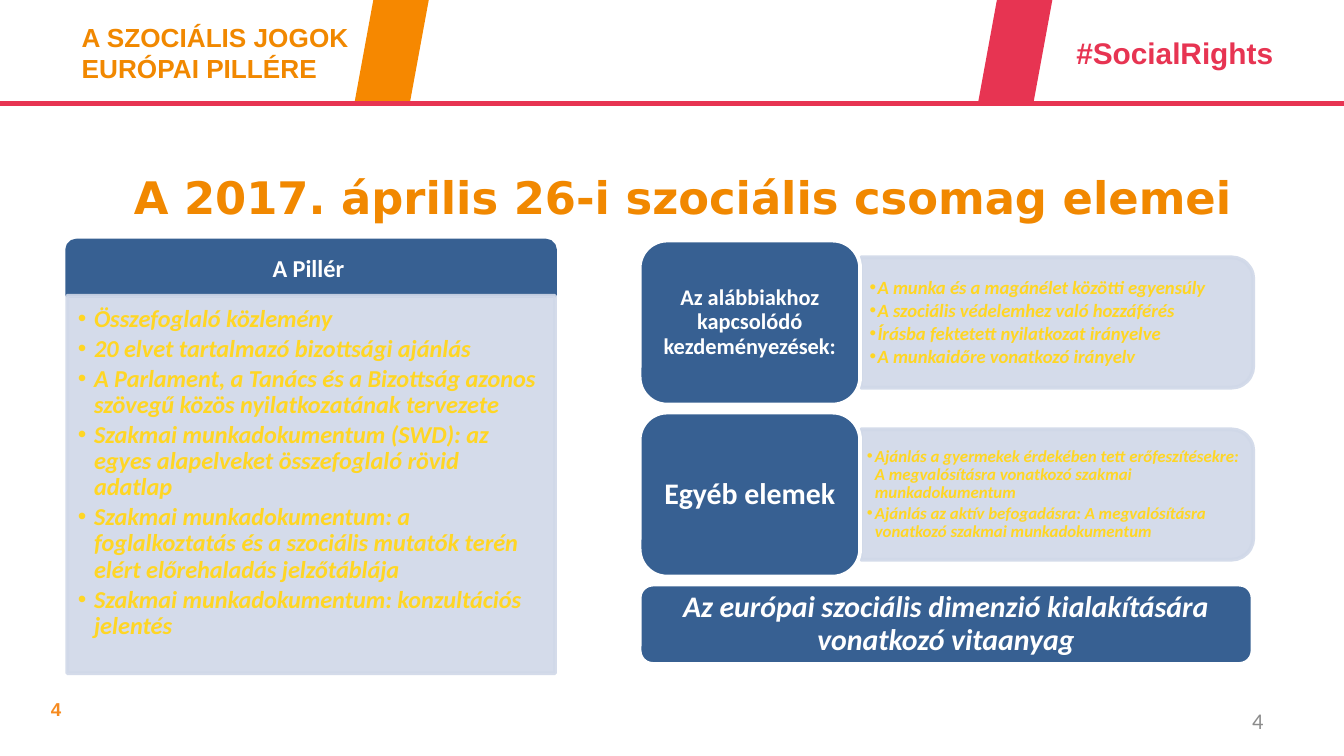
from pptx import Presentation
from pptx.dml.color import RGBColor
from pptx.enum.shapes import MSO_CONNECTOR, MSO_SHAPE
from pptx.enum.text import MSO_ANCHOR, MSO_AUTO_SIZE, PP_ALIGN
from pptx.oxml.ns import qn
from pptx.util import Emu, Pt
from lxml import etree

PX = 9144
ORANGE, RED, BLUE, PALE = "F18800", "E73452", "376092", "D0D8E8"
YELLOW, WHITE = "FFD624", "FFFFFF"
LEFT, CENTER, RIGHT = PP_ALIGN.LEFT, PP_ALIGN.CENTER, PP_ALIGN.RIGHT
TOP, MIDDLE = MSO_ANCHOR.TOP, MSO_ANCHOR.MIDDLE
NO_FIT = MSO_AUTO_SIZE.NONE
STRAIGHT = MSO_CONNECTOR.STRAIGHT
SLANT, ROUND = MSO_SHAPE.PARALLELOGRAM, MSO_SHAPE.ROUNDED_RECTANGLE
ROUND_TOP = MSO_SHAPE.ROUND_2_SAME_RECTANGLE

PILLAR = [
    "Összefoglaló közlemény",
    "20 elvet tartalmazó bizottsági ajánlás",
    "A Parlament, a Tanács és a Bizottság azonos szövegű közös nyilatkozatának tervezete",
    "Szakmai munkadokumentum (SWD): az egyes alapelveket összefoglaló rövid adatlap",
    "Szakmai munkadokumentum: a foglalkoztatás és a szociális mutatók terén elért "
    "előrehaladás jelzőtáblája",
    "Szakmai munkadokumentum: konzultációs jelentés",
]
ROWS = [
    ("Az alábbiakhoz kapcsolódó kezdeményezések:", 12, 5, [
        "A munka és a magánélet közötti egyensúly",
        "A szociális védelemhez való hozzáférés",
        "Írásba fektetett nyilatkozat irányelve",
        "A munkaidőre vonatkozó irányelv",
    ], 10, (6, 3, 6, 3)),
    ("Egyéb elemek", 16, 7, [
        "Ajánlás a gyermekek érdekében tett erőfeszítésekre: "
        "A megvalósításra vonatkozó szakmai munkadokumentum",
        "Ajánlás az aktív befogadásra: A megvalósításra vonatkozó szakmai munkadokumentum",
    ], 9, (4, 2, 4, 2)),
]


def px(n):
    return Emu(n * PX)


def rgb(color):
    return RGBColor.from_string(color)


def place(sp, x, y, w, h):
    sp.left, sp.top, sp.width, sp.height = px(x), px(y), px(w), px(h)


def write(sp, lines, size, color, font="Calibri", bold=True, italic=False,
          align=LEFT, anchor=MIDDLE, inset=(10, 5, 10, 5), spacing=None, bullet=0):
    tf = sp.text_frame
    tf.word_wrap = True
    tf.auto_size = NO_FIT
    tf.vertical_anchor = anchor
    tf.margin_left, tf.margin_top, tf.margin_right, tf.margin_bottom = map(px, inset)
    for i, line in enumerate(lines):
        p = tf.add_paragraph() if i else tf.paragraphs[0]
        p.alignment = align
        p.line_spacing = spacing
        p.space_before = Pt(0)
        if bullet:
            add_bullet(p, bullet)
            p.space_after = Pt(size * 0.15)
        r = p.add_run()
        r.text = line
        f = r.font
        f.name, f.size, f.bold, f.italic = font, Pt(size), bold, italic
        f.color.rgb = rgb(color)


def add_bullet(p, indent):
    p.level = 1
    pPr = p._p.get_or_add_pPr()
    pPr.set("marL", str(px(indent)))
    pPr.set("indent", str(px(-indent)))
    etree.SubElement(pPr, qn("a:buFont")).set("typeface", "Arial")
    etree.SubElement(pPr, qn("a:buChar")).set("char", "•")


def paint(sp, fill, line=None, alpha=None):
    sp.fill.solid()
    sp.fill.fore_color.rgb = rgb(fill)
    if line:
        sp.line.color.rgb = rgb(line)
        sp.line.width = Pt(2)
    else:
        sp.line.fill.background()
    if alpha:
        for clr in sp._element.spPr.iter(qn("a:srgbClr")):
            etree.SubElement(clr, qn("a:alpha")).set("val", str(alpha * 1000))


def add_shape(s, kind, x, y, w, h, fill, line=None, alpha=None):
    sp = s.shapes.add_shape(kind, px(x), px(y), px(w), px(h))
    sp.shadow.inherit = False
    paint(sp, fill, line, alpha)
    return sp


def add_text(s, x, y, w, h, lines, size, color, **fmt):
    sp = s.shapes.add_textbox(px(x), px(y), px(w), px(h))
    write(sp, lines, size, color, **fmt)


def add_line(s, x1, y1, x2, y2, color, width):
    ln = s.shapes.add_connector(STRAIGHT, px(x1), px(y1), px(x2), px(y2))
    ln.line.color.rgb = rgb(color)
    ln.line.width = Pt(width)
    etree.SubElement(ln._element.spPr, qn("a:effectLst"))


def add_header(s):
    head = dict(font="Arial", anchor=TOP)
    add_text(s, 51, 11, 254, 57, ["A SZOCIÁLIS JOGOK EURÓPAI PILLÉRE"], 14, ORANGE, **head)
    add_line(s, 0, 77, 1000, 77, RED, 2.25)
    add_text(s, 791, 21, 209, 37, ["#SocialRights"], 16, RED, **head)
    for x, color in ((264, "F68800"), (728, RED)):
        add_shape(s, SLANT, x, 0, 55, 75, color)


def add_pillar(s, body):
    sp = add_shape(s, ROUND_TOP, 50, 179, 363, 41, BLUE, BLUE)
    write(sp, ["A Pillér "], 13, WHITE, align=CENTER, inset=(10, 6, 10, 6), spacing=0.9)
    place(body, 50, 220, 363, 281)
    paint(body, PALE, PALE, 90)
    write(body, PILLAR, 13, YELLOW, italic=True, anchor=TOP,
          inset=(8, 8, 10, 11), spacing=0.9, bullet=12)
    sp._element.addnext(body._element)


def add_row(s, y, label, label_size, margin, items, size, inset):
    panel = add_shape(s, ROUND_TOP, 738, y - 85, 97, 292, PALE, PALE, 90)
    panel.rotation = 90
    add_text(s, 641, y + 17, 288, 88, items, size, YELLOW, italic=True,
             inset=inset, spacing=0.9, bullet=6)
    sp = add_shape(s, ROUND, 476, y, 164, 122, BLUE, WHITE)
    write(sp, [label], label_size, WHITE, align=CENTER,
          inset=(margin, 3, margin, 3), spacing=0.9)


def main():
    prs = Presentation()
    prs.slide_width = px(1000)
    prs.slide_height = Emu(prs.slide_width * 9 // 16)
    s = prs.slides.add_slide(prs.slide_layouts[1])
    title, body = s.placeholders
    place(title, 16, 108, 984, 77)
    write(title, ["A 2017. április 26-i szociális csomag elemei"], 24, ORANGE,
          font="DejaVu Sans", align=CENTER)
    add_header(s)
    add_pillar(s, body)
    for i, row in enumerate(ROWS):
        add_row(s, 179 + 128 * i, *row)
    sp = add_shape(s, ROUND, 476, 435, 456, 59, BLUE, WHITE)
    write(sp, ["Az európai szociális dimenzió kialakítására vonatkozó vitaanyag"], 16,
          WHITE, italic=True, align=CENTER, inset=(7, 3, 7, 3), spacing=0.9)
    add_text(s, 28, 514, 218, 27, ["4"], 10, "F68B20", font="Arial", anchor=TOP)
    add_text(s, 717, 521, 233, 30, ["4"], 12, "8C8C8C", bold=False, align=RIGHT)
    prs.save("out.pptx")


if __name__ == "__main__":
    main()
